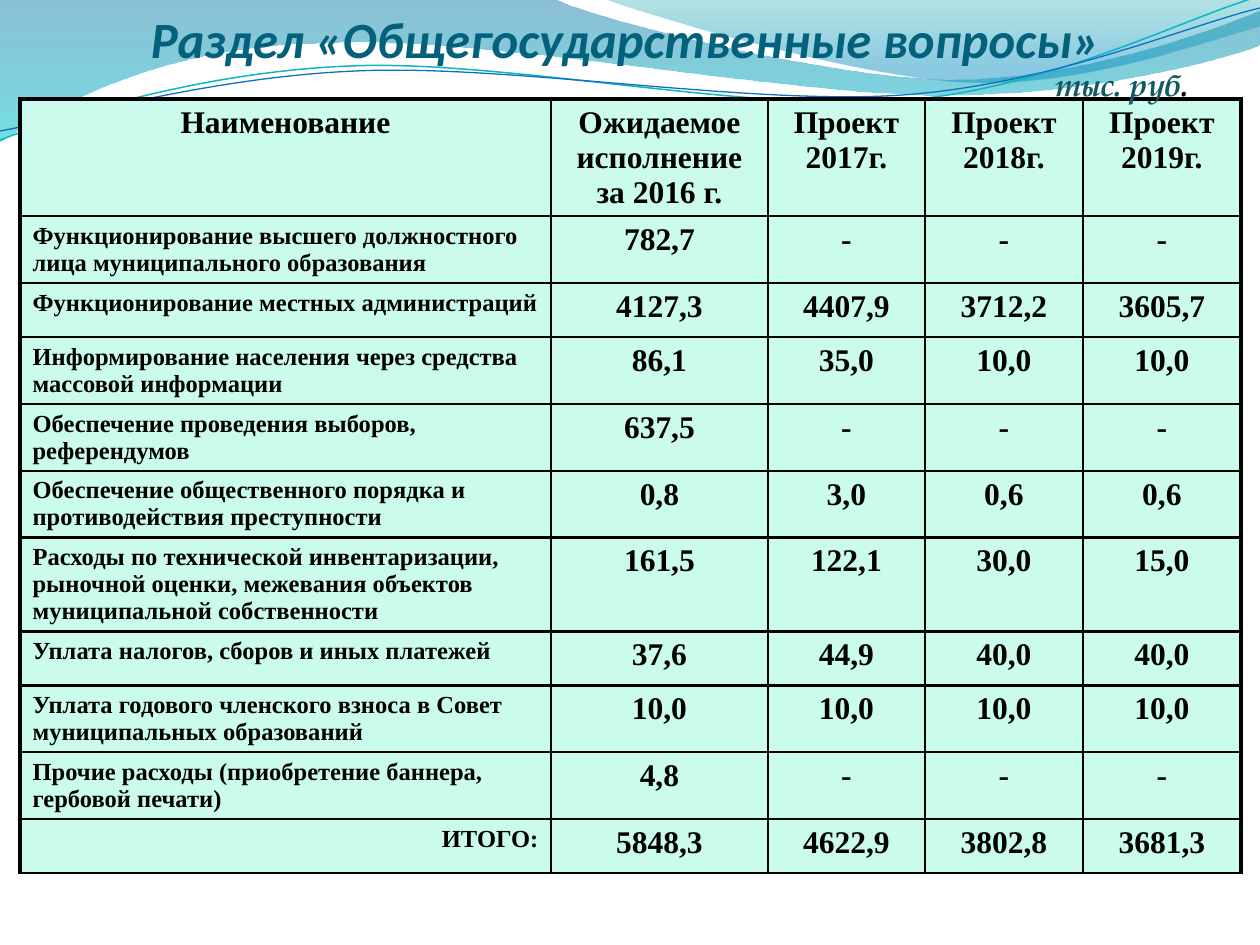
"""Budget slide: spending on general state matters, as a table under a wave header."""
from lxml import etree
from pptx import Presentation, util as u
from pptx.dml.color import RGBColor
from pptx.enum import text as t
from pptx.oxml import ns

TITLE = "Раздел «Общегосударственные вопросы»"
UNIT = (("тыс. руб", "115964"), (".", "000000"))
HEADER = ("Наименование", "Ожидаемое исполнение за 2016 г.",
          "Проект 2017г.", "Проект 2018г.", "Проект 2019г.")
SPENDING = [
    ("Функционирование высшего должностного лица муниципального образования", "782,7", "-", "-", "-"),
    ("Функционирование местных администраций", "4127,3", "4407,9", "3712,2", "3605,7"),
    ("Информирование населения через средства массовой информации", "86,1", "35,0", "10,0", "10,0"),
    ("Обеспечение проведения выборов, референдумов", "637,5", "-", "-", "-"),
    ("Обеспечение общественного порядка и противодействия преступности", "0,8", "3,0", "0,6", "0,6"),
    ("Расходы по технической инвентаризации, рыночной оценки, межевания объектов "
     "муниципальной собственности", "161,5", "122,1", "30,0", "15,0"),
    ("Уплата налогов, сборов и иных платежей", "37,6", "44,9", "40,0", "40,0"),
    ("Уплата годового членского взноса в Совет муниципальных образований", "10,0", "10,0", "10,0", "10,0"),
    ("Прочие расходы (приобретение баннера, гербовой печати)", "4,8", "-", "-", "-"),
    ("ИТОГО:", "5848,3", "4622,9", "3802,8", "3681,3"),
]
COLUMNS = (531, 217, 157, 158, 158)
HEADER_HEIGHT, ROW_HEIGHT = 63, 54

WAVES = [
    ([[(0, 0)], [(554, -1)], [(600, 21), (837, 79), (955, 79)], [(1075, 79), (1207, 33), (1260, 11)],
      [(1261, 45)], [(1239, 55), (1096, 96), (940, 95)], [(783, 95), (481, 35), (324, 43)],
      [(163, 45), (58, 105), (-1, 142)]], [(0, "0074A1", 45), (100, "00C6CF", 55)]),
    ([[(604, -1)], [(641, 14), (859, 78), (969, 82)], [(1079, 87), (1211, 40), (1260, 26)],
      [(1260, 0)]], [(0, "00A1A9", 30), (80, "008BBF", 45)]),
]
STRANDS = [
    ([[(0, 140)], [(60, 117), (199, 72), (349, 66)], [(498, 59), (747, 112), (898, 101)],
      [(1050, 89), (1182, 19), (1257, -3)]], "0AB8BF", 0.85),
    ([[(0, 131)], [(59, 121), (207, 77), (357, 71)], [(508, 64), (752, 106), (903, 95)],
      [(1053, 84), (1186, 26), (1260, 8)]], "0F6FC6", 0.75),
]


def px(length):
    """Turn pixels into EMU."""
    return u.Emu(round(length * 914400 / 126))


def color(hex_code):
    """Turn a hex string into a colour."""
    return RGBColor.from_string(hex_code)


def style(run, size, font, hex_code, italic=False):
    """Format one bold run."""
    run.font.size, run.font.name = u.Pt(size), font
    run.font.bold, run.font.italic = True, italic
    run.font.color.rgb = color(hex_code)


def add_outline(slide, segments, close):
    """Draw a shadowless freeform whose three-point segments are cubic curves."""
    start, *ends = [(px(x), px(y)) for x, y in (segment[-1] for segment in segments)]
    builder = slide.shapes.build_freeform(*start)
    builder.add_line_segments(ends, close=close)
    outline = builder.convert_to_shape()
    outline.shadow.inherit = False
    straights = list(outline._element.iter(ns.qn("a:lnTo")))
    for straight, segment in zip(straights, segments[1:]):
        if len(segment) == 3:
            curve = etree.Element(ns.qn("a:cubicBezTo"))
            for x, y in segment:
                etree.SubElement(curve, ns.qn("a:pt"), x=str(px(x) - outline.left),
                                 y=str(px(y) - outline.top))
            straight.getparent().replace(straight, curve)
    return outline


def add_wave(slide, segments, stops):
    """Draw a translucent wave that shades from top to bottom."""
    wave = add_outline(slide, segments, True)
    wave.line.fill.background()
    wave.fill.gradient()
    gradient = wave._element.spPr.find(ns.qn("a:gradFill"))
    for child in list(gradient):
        gradient.remove(child)
    stop_list = etree.SubElement(gradient, ns.qn("a:gsLst"))
    for position, hex_code, opacity in stops:
        stop = etree.SubElement(stop_list, ns.qn("a:gs"), pos=str(position * 1000))
        shade = etree.SubElement(stop, ns.qn("a:srgbClr"), val=hex_code)
        etree.SubElement(shade, ns.qn("a:alpha"), val=str(opacity * 1000))
    etree.SubElement(gradient, ns.qn("a:lin"), ang="5400000", scaled="0")


def add_strand(slide, segments, hex_code, width):
    """Draw a thin curved line."""
    strand = add_outline(slide, segments, False)
    strand.fill.background()
    strand.line.color.rgb = color(hex_code)
    strand.line.width = u.Pt(width)


def set_borders(cell, widths):
    """Give a cell black borders, by side."""
    properties = cell._tc.get_or_add_tcPr()
    for side, width in widths.items():
        border = etree.SubElement(properties, ns.qn(f"a:ln{side}"), w=str(u.Pt(width)))
        fill = etree.SubElement(border, ns.qn("a:solidFill"))
        etree.SubElement(fill, ns.qn("a:srgbClr"), val="000000")


def add_title(slide):
    """Place the title above the waves."""
    title = slide.shapes.title
    title._element.getparent().append(title._element)
    title.left, title.top, title.width, title.height = px(59), px(0), px(1134), px(69)
    frame = title.text_frame
    frame.text = TITLE
    frame.vertical_anchor = t.MSO_ANCHOR.BOTTOM
    frame.margin_left = frame.margin_right = frame.margin_bottom = 0
    frame.paragraphs[0].alignment = t.PP_ALIGN.CENTER
    style(frame.paragraphs[0].runs[0], 29, "Calibri", "04617B", True)


def add_spending(slide):
    """Build the spending table."""
    rows = [HEADER, *SPENDING]
    height = HEADER_HEIGHT + ROW_HEIGHT * len(SPENDING)
    table = slide.shapes.add_table(len(rows), len(COLUMNS), px(20), px(99),
                                   px(sum(COLUMNS)), px(height)).table
    table.first_row = table.horz_banding = False
    for column, width in zip(table.columns, COLUMNS):
        column.width = px(width)
    last = len(COLUMNS) - 1
    for r, row in enumerate(rows):
        table.rows[r].height = px(ROW_HEIGHT if r else HEADER_HEIGHT)
        for c, value in enumerate(row):
            cell = table.cell(r, c)
            set_borders(cell, {"L": 1.5 if c else 3, "R": 3 if c == last else 1.5,
                               "T": 1.5 if r else 3, "B": 1.5})
            cell.fill.solid()
            cell.fill.fore_color.rgb = color("CAFBED")
            cell.text_frame.text = value
            paragraph = cell.text_frame.paragraphs[0]
            is_name = r > 0 and c == 0
            if not is_name:
                paragraph.alignment = t.PP_ALIGN.CENTER
            elif row is SPENDING[-1]:
                paragraph.alignment = t.PP_ALIGN.RIGHT
            style(paragraph.runs[0], 14 if is_name else 18, "Times New Roman", "000000")


def add_unit(slide):
    """Write the unit of measure at the upper right."""
    frame = slide.shapes.add_textbox(px(1015), px(59), px(186), px(50)).text_frame
    frame.word_wrap = True
    paragraph = frame.paragraphs[0]
    paragraph.alignment = t.PP_ALIGN.RIGHT
    for part, hex_code in UNIT:
        run = paragraph.add_run()
        run.text = part
        style(run, 18, "TeX Gyre Pagella", hex_code, True)


def main():
    """Build and save the slide."""
    deck = Presentation()
    deck.slide_width, deck.slide_height = px(1260), px(945)
    slide = deck.slides.add_slide(deck.slide_layouts[5])
    for wave in WAVES:
        add_wave(slide, *wave)
    for strand in STRANDS:
        add_strand(slide, *strand)
    add_title(slide)
    add_spending(slide)
    add_unit(slide)
    deck.save("out.pptx")


if __name__ == "__main__":
    main()
